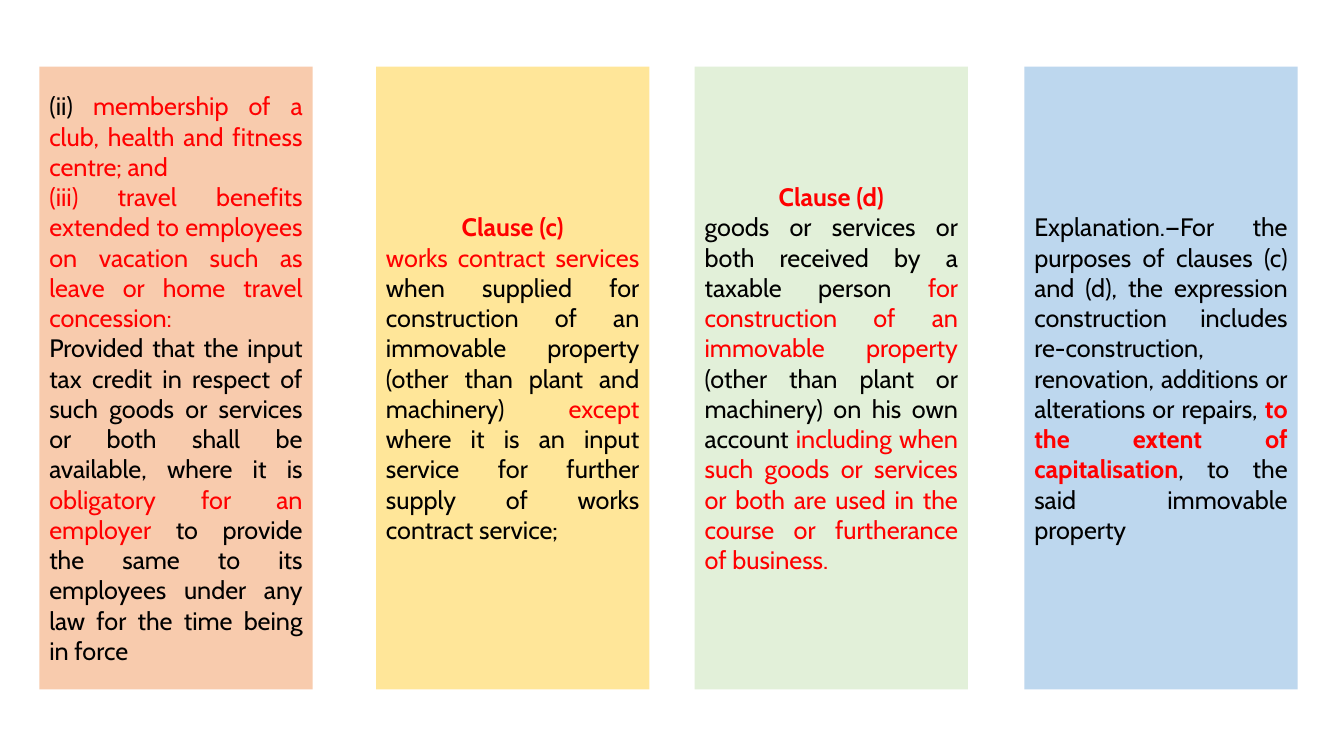
from pptx import Presentation
from pptx.dml.color import RGBColor
from pptx.enum import shapes, text
from pptx.util import Inches, Pt

FONT = "Cabin"
BLACK, RED = "000000", "FF0000"
CENTER, JUSTIFY = text.PP_ALIGN.CENTER, text.PP_ALIGN.JUSTIFY


def color(hex_value):
    return RGBColor.from_string(hex_value)


def plain(words):
    return words, BLACK, False


def red(words):
    return words, RED, False


def strong(words):
    return words, RED, True


# Panels: left edge, fill, paragraphs as (alignment, runs)
PANELS = [
    (0.39, "F8CBAD", [
        (JUSTIFY, [
            plain("(ii) "),
            red("membership of a club, health and fitness centre; and"),
        ]),
        (JUSTIFY, [
            red("(iii) travel benefits extended to employees on vacation "
                "such as leave or home travel concession:"),
        ]),
        (JUSTIFY, [
            plain("Provided that the input tax credit in respect of such goods "
                  "or services or both shall be available, where it is "),
            red("obligatory for an employer "),
            plain("to provide the same to its employees under any law "
                  "for the time being in force"),
        ]),
    ]),
    (3.73, "FFE699", [
        (CENTER, [strong("Clause (c)")]),
        (JUSTIFY, [
            red("works contract services"),
            plain(" when supplied for construction of an immovable property "
                  "(other than plant and machinery) "),
            red("except"),
            plain(" where it is an input service for further supply "
                  "of works contract service;"),
        ]),
    ]),
    (6.89, "E2F0D9", [
        (CENTER, [strong("Clause (d)")]),
        (JUSTIFY, [
            plain("goods or services or both received by a taxable person "),
            red("for construction of an immovable property "),
            plain("(other than plant or machinery) on his own account "),
            red("including when such goods or services or both are used "
                "in the course or furtherance of business."),
        ]),
    ]),
    (10.16, "BDD7EE", [
        (JUSTIFY, [
            plain("Explanation.—For the purposes of clauses (c) and (d), "
                  "the expression construction includes re-construction, "
                  "renovation, additions or alterations or repairs, "),
            strong("to the extent of capitalisation"),
            plain(", to the said immovable property"),
        ]),
    ]),
]


def add_run(paragraph, words, run_color, bold):
    run = paragraph.add_run()
    run.text = words
    run.font.name = FONT
    run.font.size = Pt(18)
    run.font.bold = bold
    run.font.color.rgb = color(run_color)


def add_panel(slide, left, fill, paragraphs):
    panel = slide.shapes.add_shape(
        shapes.MSO_SHAPE.RECTANGLE,
        Inches(left), Inches(0.66), Inches(2.71), Inches(6.18))
    panel.shadow.inherit = False
    panel.fill.solid()
    panel.fill.fore_color.rgb = color(fill)
    panel.line.fill.background()

    frame = panel.text_frame
    frame.word_wrap = True
    frame.vertical_anchor = text.MSO_ANCHOR.MIDDLE
    for index, (alignment, runs) in enumerate(paragraphs):
        paragraph = frame.add_paragraph() if index else frame.paragraphs[0]
        paragraph.alignment = alignment
        for run in runs:
            add_run(paragraph, *run)


def main():
    deck = Presentation()
    deck.slide_width, deck.slide_height = Inches(13.33), Inches(7.5)
    # Blank layout, since the slide has no title
    slide = deck.slides.add_slide(deck.slide_layouts[6])
    for panel in PANELS:
        add_panel(slide, *panel)
    deck.save("out.pptx")


if __name__ == "__main__":
    main()
